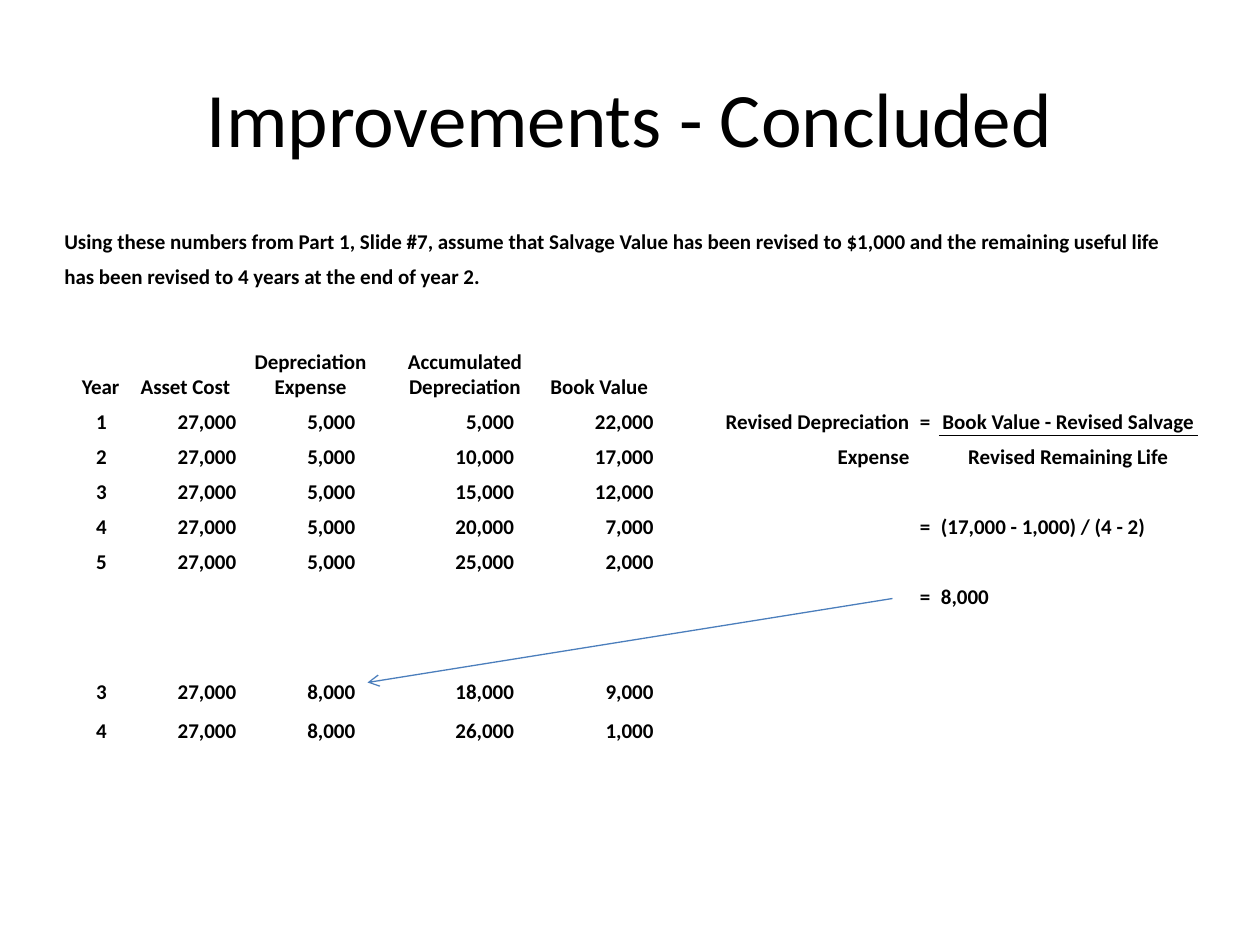
from dataclasses import dataclass
from typing import Any

import lxml.etree
import pptx
import pptx.dml.color
import pptx.enum.shapes
import pptx.enum.text
import pptx.oxml
import pptx.oxml.ns
import pptx.util

Pt = pptx.util.Pt
Align = pptx.enum.text.PP_ALIGN
Anchor = pptx.enum.text.MSO_ANCHOR
BLACK = pptx.dml.color.RGBColor(0x00, 0x00, 0x00)
BLUE = pptx.dml.color.RGBColor(0x4B, 0x7E, 0xBC)
FONT = "Calibri"
TABLE_FONT = {"name": FONT, "size": Pt(12), "bold": True}
TITLE_FONT = {"name": FONT, "size": Pt(44), "bold": False}
CELL_FORMAT = {
    "vertical_anchor": Anchor.BOTTOM,
    "margin_left": Pt(0.75),
    "margin_right": Pt(0.75),
    "margin_top": Pt(0.75),
    "margin_bottom": Pt(0),
}
COLUMN_WIDTHS = [33, 74, 69, 16, 75.5, 78, 24.5, 114.5, 16.5, 147]
ROW_HEIGHTS = [20] * 3 + [43] + [20] * 6 + [16] * 2 + [22.25] * 2
NUMBER_COLUMNS = [0, 1, 2, 4, 5]
NUMBER_MARGINS = [8, 8, 9, 9.75, 8]
FORMULA_COLUMN = 9


@dataclass
class Entry:
    row: int
    column: int
    text: str
    align: Any = Align.LEFT
    margin: float = 0.75
    span: int = 1


INTRODUCTION = [
    Entry(0, 0, "Using these numbers from Part 1, Slide #7, assume that Salvage Value has been "
          "revised to $1,000 and the remaining useful life", span=10),
    Entry(1, 0, "has been revised to 4 years at the end of year 2.", span=5),
]
HEADINGS = [
    Entry(3, 0, "Year", Align.RIGHT),
    Entry(3, 1, "Asset Cost", Align.CENTER),
    Entry(3, 2, "Depreciation Expense", Align.CENTER),
    Entry(3, 4, "Accumulated Depreciation", Align.CENTER),
    Entry(3, 5, "Book Value", Align.CENTER),
]
SCHEDULE = {
    4: ("1", "27,000", "5,000", "5,000", "22,000"),
    5: ("2", "27,000", "5,000", "10,000", "17,000"),
    6: ("3", "27,000", "5,000", "15,000", "12,000"),
    7: ("4", "27,000", "5,000", "20,000", "7,000"),
    8: ("5", "27,000", "5,000", "25,000", "2,000"),
    12: ("3", "27,000", "8,000", "18,000", "9,000"),
    13: ("4", "27,000", "8,000", "26,000", "1,000"),
}
FORMULA = [
    Entry(4, 7, "Revised Depreciation", Align.RIGHT),
    Entry(5, 7, "Expense", Align.RIGHT),
    Entry(4, FORMULA_COLUMN, "Book Value - Revised Salvage", Align.CENTER),
    Entry(5, FORMULA_COLUMN, "Revised Remaining Life", Align.CENTER),
    Entry(7, FORMULA_COLUMN, "(17,000 - 1,000) / (4 - 2)"),
    Entry(9, FORMULA_COLUMN, "8,000"),
    *(Entry(row, 8, "=", Align.CENTER) for row in (4, 7, 9)),
]


def apply_format(target: Any, values: dict[str, Any]) -> None:
    for name, value in values.items():
        setattr(target, name, value)


def write_text(frame: Any, text: str, align: Any, font: dict[str, Any]) -> None:
    para = frame.paragraphs[0]
    para.alignment = align
    span = para.add_run()
    span.text = text
    apply_format(span.font, font)
    span.font.color.rgb = BLACK


def schedule_entries() -> list[Entry]:
    return [
        Entry(row, column, text, Align.RIGHT, margin)
        for row, values in SCHEDULE.items()
        for column, text, margin in zip(NUMBER_COLUMNS, values, NUMBER_MARGINS)
    ]


def draw_entry(table: Any, entry: Entry) -> None:
    cell = table.cell(entry.row, entry.column)
    if entry.span > 1:
        cell.merge(table.cell(entry.row, entry.column + entry.span - 1))
    cell.margin_right = Pt(entry.margin)
    write_text(cell.text_frame, entry.text, entry.align, TABLE_FONT)


def draw_border(cell: Any, side: str) -> None:
    line = pptx.oxml.parse_xml(
        f'<a:{side} xmlns:a="http://schemas.openxmlformats.org/drawingml/2006/main" w="{Pt(0.5)}">'
        f'<a:solidFill><a:srgbClr val="{BLACK}"/></a:solidFill></a:{side}>'
    )
    cell._tc.get_or_add_tcPr().insert(0, line)


def draw_table(page: Any) -> None:
    frame = page.shapes.add_table(
        len(ROW_HEIGHTS), len(COLUMN_WIDTHS),
        Pt(36), Pt(126), Pt(sum(COLUMN_WIDTHS)), Pt(sum(ROW_HEIGHTS)),
    )
    table = frame.table
    apply_format(table, {"first_row": False, "horz_banding": False})
    for column, width in zip(table.columns, COLUMN_WIDTHS):
        column.width = Pt(width)
    for row, height in zip(table.rows, ROW_HEIGHTS):
        row.height = Pt(height)
    for cell in table.iter_cells():
        apply_format(cell, CELL_FORMAT)
        cell.fill.background()
        para = cell.text_frame.paragraphs[0]
        lxml.etree.SubElement(para._p, pptx.oxml.ns.qn("a:endParaRPr"), sz="1200")
    for entry in INTRODUCTION + HEADINGS + schedule_entries() + FORMULA:
        draw_entry(table, entry)
    draw_border(table.cell(4, FORMULA_COLUMN), "lnB")
    draw_border(table.cell(5, FORMULA_COLUMN), "lnT")


def draw_title(page: Any) -> None:
    box = page.shapes.add_textbox(Pt(36), Pt(21.6), Pt(648), Pt(90))
    apply_format(box.text_frame, {"word_wrap": True, "vertical_anchor": Anchor.MIDDLE})
    write_text(box.text_frame, "Improvements - Concluded", Align.CENTER, TITLE_FONT)


def draw_arrow(page: Any) -> None:
    arrow = page.shapes.add_connector(
        pptx.enum.shapes.MSO_CONNECTOR.STRAIGHT, Pt(510), Pt(342), Pt(210), Pt(390)
    )
    arrow.line.color.rgb = BLUE
    arrow.line.width = Pt(0.75)
    line = arrow.line._get_or_add_ln()
    lxml.etree.SubElement(line, pptx.oxml.ns.qn("a:tailEnd"), type="arrow")
    lxml.etree.SubElement(arrow._element.spPr, pptx.oxml.ns.qn("a:effectLst"))


def main() -> None:
    deck = pptx.Presentation()
    apply_format(deck, {"slide_width": Pt(720), "slide_height": Pt(540)})
    page = deck.slides.add_slide(deck.slide_layouts[6])
    draw_title(page)
    draw_table(page)
    draw_arrow(page)
    deck.save("out.pptx")


if __name__ == "__main__":
    main()
